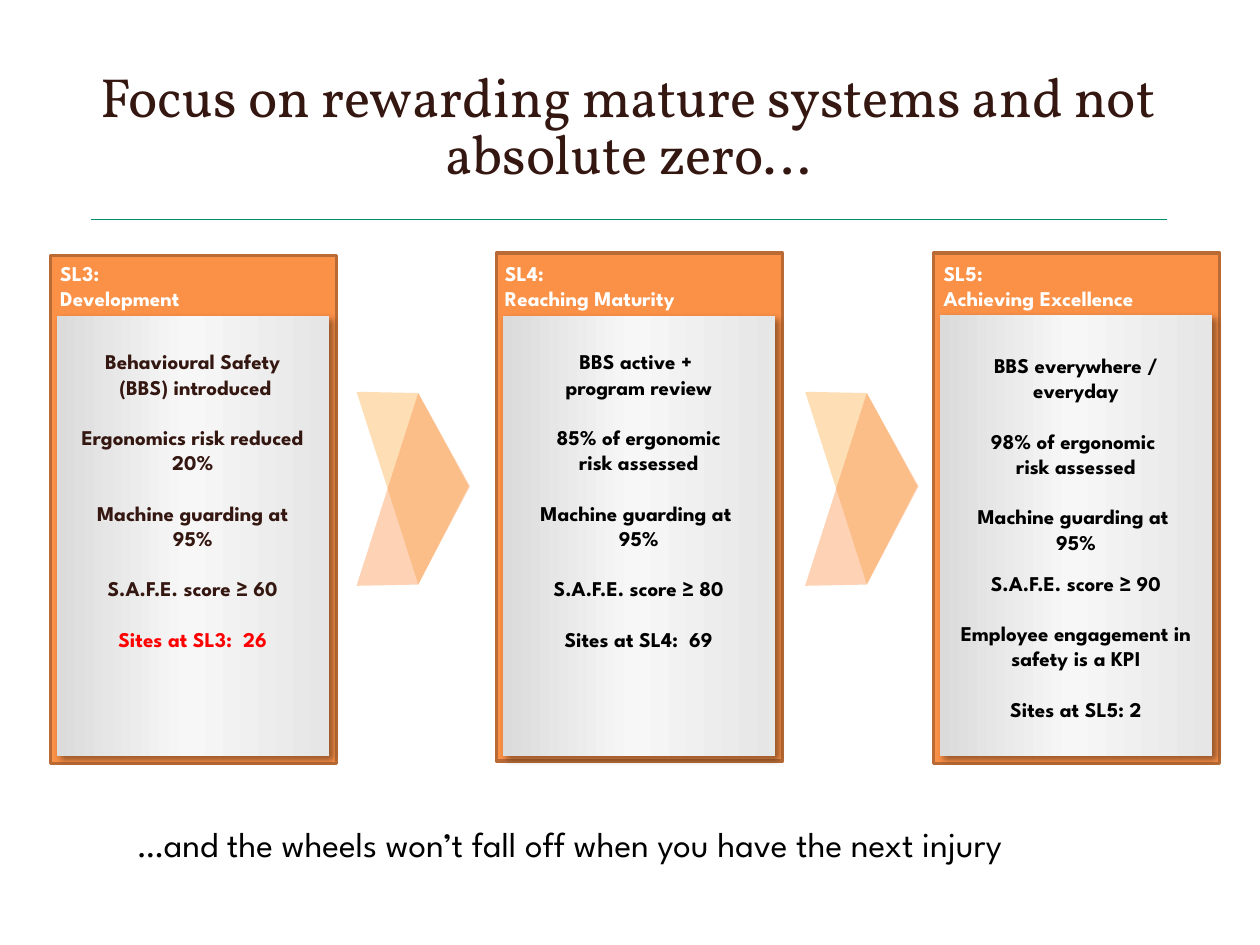
from copy import deepcopy
from lxml import etree
from pptx import Presentation
from pptx.dml.color import RGBColor
from pptx.enum.shapes import MSO_CONNECTOR, MSO_SHAPE
from pptx.enum.text import MSO_ANCHOR, PP_ALIGN
from pptx.oxml.ns import qn
from pptx.util import Inches, Pt

WHITE = RGBColor(0xFF, 0xFF, 0xFF)
BLACK = RGBColor(0, 0, 0)
BROWN = RGBColor(0x35, 0x17, 0x11)
RED = RGBColor(0xFF, 0, 0)
RULE = RGBColor(0x02, 0x8D, 0x71)
ORANGE = RGBColor(0xFB, 0x90, 0x47)
AMBER = RGBColor(0xFB, 0xAE, 0x47)
RUST = RGBColor(0xBA, 0x6B, 0x35)
GREYS = [(0, RGBColor(0xDB, 0xDB, 0xDB)), (0.48, RGBColor(0xF7, 0xF7, 0xF7)),
         (1, RGBColor(0xE6, 0xE6, 0xE6))]
FONT = "League Spartan"
GAP = 14.4


def set_font(p, size, color, bold=False, name=FONT):
    p.font.name, p.font.size, p.font.bold = name, Pt(size), bold
    p.font.color.rgb = color


def add_rect(left, top, width, height):
    sp = s.shapes.add_shape(MSO_SHAPE.RECTANGLE, Inches(left), Inches(top),
                            Inches(width), Inches(height))
    sp.shadow.inherit = False
    return sp


prs = Presentation()
prs.slide_width, prs.slide_height = Inches(10), Inches(7.5)
s = prs.slides.add_slide(prs.slide_layouts[5])

# Title and the rule below it
title = s.shapes.title
title.left, title.top = Inches(0.47), Inches(0.45)
title.width, title.height = Inches(9.03), Inches(1.14)
tf = title.text_frame
tf.vertical_anchor = MSO_ANCHOR.MIDDLE
p = tf.paragraphs[0]
p.text = "Focus on rewarding mature systems and not absolute zero…"
p.alignment, p.line_spacing = PP_ALIGN.CENTER, 0.86
set_font(p, 31.5, BROWN, name="Vollkorn")

rule = s.shapes.add_connector(MSO_CONNECTOR.STRAIGHT, Inches(0.72), Inches(1.74),
                              Inches(9.26), Inches(1.74))
rule.line.color.rgb, rule.line.width = RULE, Pt(0.75)
etree.SubElement(rule._element.spPr, qn("a:effectLst"))

# Stage cards: left, top, height, header left, panel top, text inset, colour,
# heading, then lines with the space before each in points
cards = [
    (0.4, 2.03, 4.03, 0.38, 2.51, 0.26, BROWN, ["SL3:", "Development"],
     [("Behavioural Safety", 0), (" (BBS) introduced", 0),
      ("Ergonomics risk reduced 20%", GAP), ("Machine guarding at", GAP), ("95%", 0),
      ("S.A.F.E. score ≥ 60", GAP), ("Sites at SL3:  26", GAP)]),
    (3.94, 2.01, 4.03, 3.91, 2.51, 0.26, BLACK, ["SL4:", "Reaching Maturity"],
     [("BBS active + ", 0), ("program review", 0), ("85% of ergonomic", GAP),
      ("risk assessed", 0), ("Machine guarding at ", GAP), ("95%", 0),
      ("S.A.F.E. score ≥ 80", GAP), ("Sites at SL4:  69", GAP)]),
    (7.41, 2.01, 4.05, 7.39, 2.5, 0.3, BLACK, ["SL5:", "Achieving Excellence"],
     [("BBS everywhere / everyday", 0), ("98% of ergonomic ", GAP),
      ("risk assessed", 0), ("Machine guarding at ", GAP), ("95%", 0),
      ("S.A.F.E. score ≥ 90", 9), ("Employee engagement in safety is a KPI", GAP),
      ("Sites at SL5: 2", GAP)]),
]
for left, top, height, head_left, panel_top, inset, color, heading, lines in cards:
    card = add_rect(left, top, 2.27, height)
    card.fill.solid()
    card.fill.fore_color.rgb = ORANGE
    card.line.color.rgb, card.line.width = RUST, Pt(2)

    # Grey panel with a three-stop gradient and a soft shadow
    panel = add_rect(left + 0.05, panel_top, 2.16, 6 - panel_top)
    panel.line.fill.background()
    panel.fill.gradient()
    panel.fill.gradient_angle = 0
    stops = panel._element.spPr.find(".//" + qn("a:gsLst"))
    stops.append(deepcopy(stops[0]))
    for stop, (position, grey) in zip(panel.fill.gradient_stops, GREYS):
        stop.position, stop.color.rgb = position, grey
    shadow = etree.SubElement(panel._element.spPr.find(qn("a:effectLst")),
                              qn("a:outerShdw"), blurRad=str(Pt(4)), dist=str(Pt(3)),
                              dir="2700000", algn="tl", rotWithShape="0")
    shade = etree.SubElement(shadow, qn("a:srgbClr"), val="000000")
    etree.SubElement(shade, qn("a:alpha"), val="40000")

    tf = panel.text_frame
    tf.word_wrap, tf.vertical_anchor = True, MSO_ANCHOR.TOP
    tf.margin_top = Inches(inset)
    for i, (text, space) in enumerate(lines):
        p = tf.add_paragraph() if i else tf.paragraphs[0]
        p.text, p.alignment, p.space_before = text, PP_ALIGN.CENTER, Pt(space)
        set_font(p, 12, RED if "SL3" in text else color, bold=True)

    # Heading
    tf = s.shapes.add_textbox(Inches(head_left), Inches(2.02), Inches(2.27),
                              Inches(0.5)).text_frame
    tf.word_wrap = True
    for i, text in enumerate(heading):
        p = tf.add_paragraph() if i else tf.paragraphs[0]
        p.text = text
        set_font(p, 12, WHITE, bold=True)

# Chevrons between the cards, each of two overlapping kites
kites = [(AMBER, [(0, 3.11), (0.49, 4.64), (0.89, 3.86), (0.49, 3.12)]),
         (ORANGE, [(0, 4.65), (0.49, 3.12), (0.9, 3.86), (0.49, 4.64)])]
for left in (2.83, 6.39):
    for color, points in kites:
        xy = [(Inches(left + x), Inches(y)) for x, y in points]
        builder = s.shapes.build_freeform(*xy[0])
        builder.add_line_segments(xy[1:], close=True)
        kite = builder.convert_to_shape()
        kite.shadow.inherit = False
        kite.fill.solid()
        kite.fill.fore_color.rgb = color
        kite.line.fill.background()
        fill = kite._element.spPr.find(qn("a:solidFill"))
        etree.SubElement(fill[0], qn("a:alpha"), val="40000")

# Closing line
tf = s.shapes.add_textbox(Inches(0.99), Inches(6.48), Inches(7.71),
                          Inches(0.44)).text_frame
tf.word_wrap = False
p = tf.paragraphs[0]
p.text = "…and the wheels won’t fall off when you have the next injury"
set_font(p, 20, BLACK)

prs.save("out.pptx")
